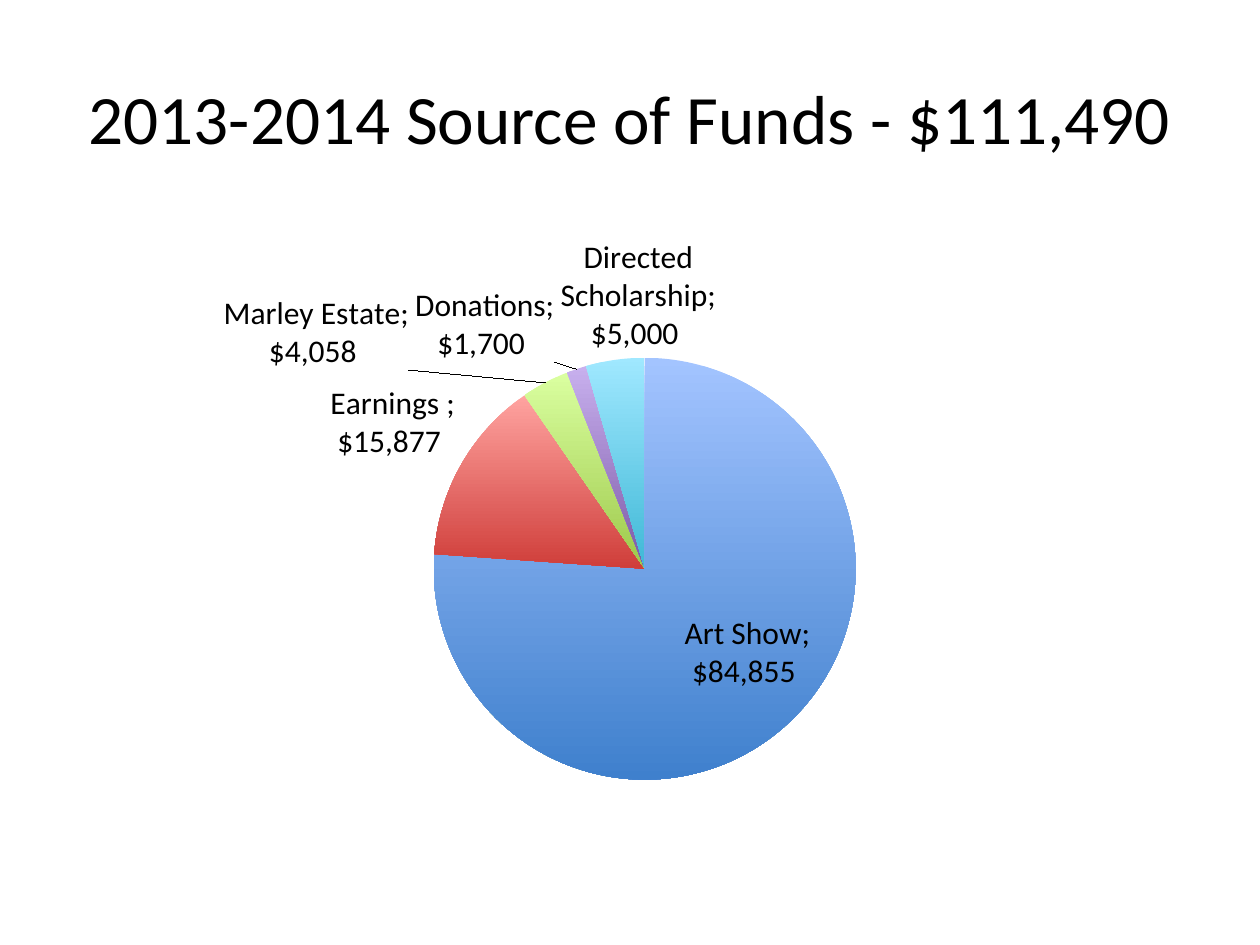
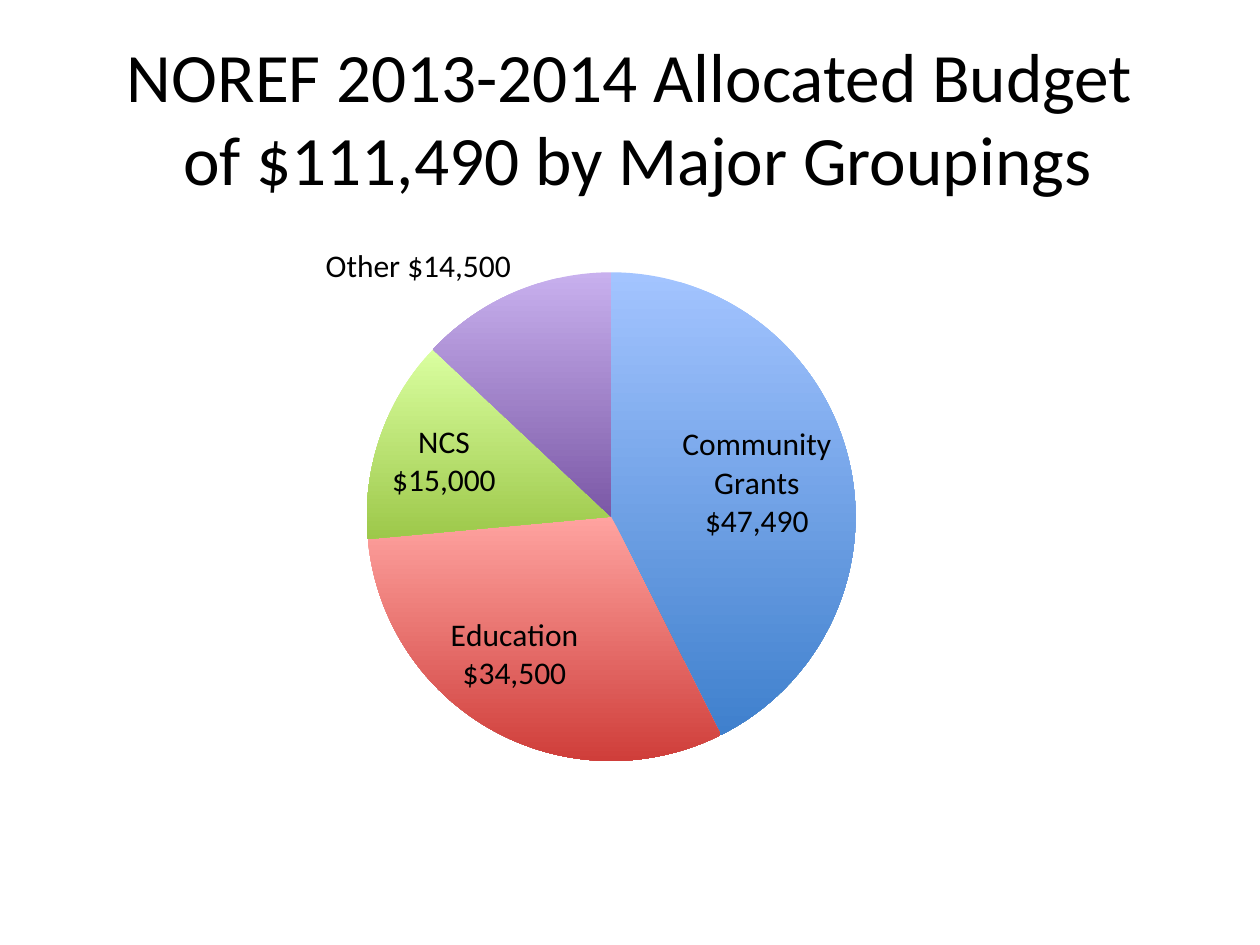
from dataclasses import dataclass, field

from lxml.etree import SubElement
from pptx import Presentation
from pptx.chart.data import CategoryChartData
from pptx.chart.series import PieSeries
from pptx.dml.color import RGBColor
from pptx.enum.chart import XL_CHART_TYPE, XL_LABEL_POSITION
from pptx.enum.text import MSO_ANCHOR, PP_ALIGN
from pptx.oxml import parse_xml
from pptx.oxml.ns import nsdecls, qn
from pptx.slide import Slide
from pptx.text.text import Font
from pptx.util import Pt


@dataclass(frozen=True)
class Theme:
    font: str = "Calibri"
    text: str = "000000"
    title_size: float = 39.6
    label_size: float = 18
    # Top and bottom colour of each slice, in order
    slices: tuple[tuple[str, str], ...] = (
        ("A3C4FF", "3F80CD"),
        ("FFA3A0", "CF3E3A"),
        ("DAFFA0", "9DC84A"),
        ("C8B0EE", "7B58A6"),
        ("A0E8FF", "3FB8D6"),
    )


@dataclass(frozen=True)
class Box:
    left: float
    top: float
    width: float
    height: float

    def lengths(self) -> tuple[Pt, Pt, Pt, Pt]:
        return Pt(self.left), Pt(self.top), Pt(self.width), Pt(self.height)


@dataclass(frozen=True)
class Fund:
    name: str
    amount: int
    label_lines: tuple[str, ...] = ()
    label_shift: tuple[float, float] | None = None


@dataclass(frozen=True)
class PiePage:
    title_lines: tuple[str, ...]
    pie_area: Box  # shares of the chart's width and height
    funds: tuple[Fund, ...] = field(default_factory=tuple)


THEME = Theme()
TITLE_BOX = Box(36, 21.6, 648, 90)
CHART_BOX = Box(36, 126, 648, 356.4)
MONEY_FORMAT = '"$"#,##0_);[Red]\\("$"#,##0\\)'

PAGES = (
    PiePage(
        ("2013-2014 Source of Funds - $111,490",),
        Box(0.327, 0.22, 0.372, 0.677),
        (
            Fund("Art Show", 84855),
            Fund("Earnings ", 15877),
            Fund("Marley Estate", 4058, label_shift=(-0.117, -0.01)),
            Fund("Donations", 1700),
            Fund("Directed Scholarship", 5000),
        ),
    ),
    PiePage(
        ("NOREF 2013-2014 Allocated Budget", " of $111,490 by Major Groupings"),
        Box(0.268, 0.083, 0.431, 0.784),
        (
            Fund("Community Grants", 47490, ("Community Grants", "$47,490")),
            Fund("Education", 34500, ("Education $34,500",)),
            Fund("NCS", 15000, ("NCS", "$15,000")),
            Fund("Other", 14500, ("Other $14,500",)),
        ),
    ),
)


def style_font(font: Font, size: float) -> None:
    font.name = THEME.font
    font.size = Pt(size)
    font.color.rgb = RGBColor.from_string(THEME.text)


def add_title(page: Slide, lines: tuple[str, ...]) -> None:
    frame = page.shapes.add_textbox(*TITLE_BOX.lengths()).text_frame
    frame.word_wrap = True
    frame.vertical_anchor = MSO_ANCHOR.MIDDLE
    para = frame.paragraphs[0]
    para.alignment = PP_ALIGN.CENTER
    for number, line in enumerate(lines):
        if number:
            para.add_line_break()
        span = para.add_run()
        span.text = line
        style_font(span.font, THEME.title_size)


def manual_layout(**settings: str | float):
    layout = parse_xml(f"<c:layout {nsdecls('c')}><c:manualLayout/></c:layout>")
    for name, value in settings.items():
        SubElement(layout[0], qn(f"c:{name}")).set("val", str(value))
    return layout


def place_pie(plot_area, area: Box) -> None:
    for layout in plot_area.findall(qn("c:layout")):
        plot_area.remove(layout)
    plot_area.insert(0, manual_layout(
        layoutTarget="inner", xMode="edge", yMode="edge",
        x=area.left, y=area.top, w=area.width, h=area.height))


def paint_slice(series: PieSeries, index: int) -> None:
    fill = series.points[index].format.fill
    fill.gradient()
    fill.gradient_angle = 270
    for stop, colour in zip(fill.gradient_stops, THEME.slices[index]):
        stop.color.rgb = RGBColor.from_string(colour)


def write_label(series: PieSeries, index: int, lines: tuple[str, ...]) -> None:
    label = series.points[index].data_label
    frame = label.text_frame
    for number, line in enumerate(lines):
        para = frame.add_paragraph() if number else frame.paragraphs[0]
        span = para.add_run()
        span.text = line
        style_font(span.font, THEME.label_size)
    label.position = XL_LABEL_POSITION.BEST_FIT


def shift_label(series: PieSeries, index: int, shift: tuple[float, float]) -> None:
    """Move a label by shares of the chart's size, which gives it a leader line."""
    label = series.points[index].data_label
    style_font(label.font, THEME.label_size)
    label.position = XL_LABEL_POSITION.BEST_FIT
    element = series.data_labels._element.find(f"{qn('c:dLbl')}[last()]")
    element.find(qn("c:idx")).addnext(manual_layout(x=shift[0], y=shift[1]))


def show_name_and_value(series: PieSeries) -> None:
    labels = series.data_labels
    style_font(labels.font, THEME.label_size)
    labels.number_format = MONEY_FORMAT
    labels.number_format_is_linked = False
    labels.position = XL_LABEL_POSITION.BEST_FIT
    labels.show_value = True
    element = labels._element
    for group in (element, *element.findall(qn("c:dLbl"))):
        group.find(qn("c:showCatName")).set("val", "1")
        separator = parse_xml(f"<c:separator {nsdecls('c')}>; </c:separator>")
        flags = [child for child in group
                 if child.tag in (qn("c:showPercent"), qn("c:showBubbleSize"))]
        flags[-1].addnext(separator)


def add_pie(page: Slide, content: PiePage) -> None:
    data = CategoryChartData(number_format=MONEY_FORMAT)
    data.categories = [fund.name for fund in content.funds]
    data.add_series("Series 1", [fund.amount for fund in content.funds])
    chart = page.shapes.add_chart(
        XL_CHART_TYPE.PIE, *CHART_BOX.lengths(), data).chart
    chart.has_title = False
    chart.has_legend = False
    style_font(chart.font, THEME.label_size)
    place_pie(chart._chartSpace.chart.plotArea, content.pie_area)

    plot = chart.plots[0]
    plot.vary_by_categories = True
    series = plot.series[0]
    for index, fund in enumerate(content.funds):
        paint_slice(series, index)
        if fund.label_lines:
            write_label(series, index, fund.label_lines)
        if fund.label_shift:
            shift_label(series, index, fund.label_shift)
    show_name_and_value(series)


def main() -> None:
    deck = Presentation()
    deck.slide_width, deck.slide_height = Pt(720), Pt(540)
    blank = deck.slide_layouts[6]
    for content in PAGES:
        page = deck.slides.add_slide(blank)
        add_title(page, content.title_lines)
        add_pie(page, content)
    deck.save("out.pptx")


if __name__ == "__main__":
    main()
